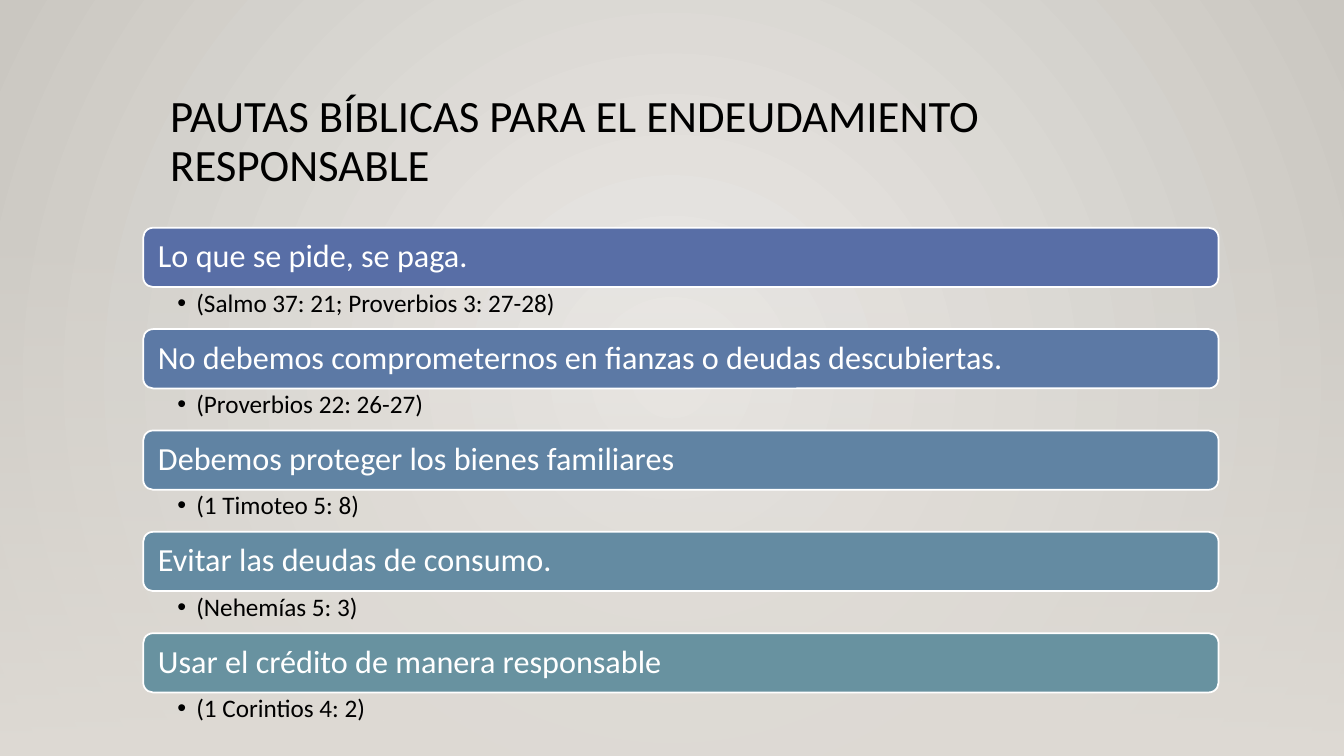
from lxml import etree
from pptx import Presentation
from pptx.dml.color import RGBColor
from pptx.enum.shapes import MSO_SHAPE
from pptx.enum.text import MSO_ANCHOR, MSO_AUTO_SIZE, PP_ALIGN
from pptx.oxml.ns import qn
from pptx.util import Cm, Pt

RECT, ROUND = MSO_SHAPE.RECTANGLE, MSO_SHAPE.ROUNDED_RECTANGLE
TOP, MIDDLE = MSO_ANCHOR.TOP, MSO_ANCHOR.MIDDLE
LEFT = PP_ALIGN.LEFT
FIXED = MSO_AUTO_SIZE.NONE

HEX = {"ink": "000000", "white": "FFFFFF", "glow": "ECEAE7",
       "edge": "CAC7C1", "floor": "DFDBD5"}

TITLE = "PAUTAS BÍBLICAS PARA EL ENDEUDAMIENTO RESPONSABLE"
RULES = [
    ("Lo que se pide, se paga.", "(Salmo 37: 21; Proverbios 3: 27-28)", "586EA6"),
    ("No debemos comprometernos en fianzas o deudas descubiertas.",
     "(Proverbios 22: 26-27)", "5C79A5"),
    ("Debemos proteger los bienes familiares", "(1 Timoteo 5: 8)", "6083A3"),
    ("Evitar las deudas de consumo.", "(Nehemías 5: 3)", "648BA2"),
    ("Usar el crédito de manera responsable", "(1 Corintios 4: 2)", "6892A0"),
]

TITLE_BOX = (4.04, 2.24, 26.67, 2.92)
LIST_BOX = (3.61, 5.74, 27.1, 12.77)
FLOOR_BOX = (0, 5.61, 33.87, 13.44)
BAR_SHARE = 0.585

HEAD = {"size": Pt(32), "color": "ink", "anchor": TOP, "pads": (0.25, 0.13, 0.25, 0.13)}
BAR = {"size": Pt(23), "color": "white", "anchor": MIDDLE, "pads": (0.3, 0.25, 0.3, 0.25)}
VERSE = {"size": Pt(18), "color": "ink", "anchor": TOP, "pads": (0.86, 0.08, 0.46, 0.08)}


def rgb(code):
    return RGBColor.from_string(code)


def lengths(box):
    return [Cm(n) for n in box]


def write(shape, text, style):
    frame = shape.text_frame
    sides = ("margin_left", "margin_top", "margin_right", "margin_bottom")
    look = dict(zip(sides, lengths(style["pads"])))
    look.update(word_wrap=True, auto_size=FIXED, vertical_anchor=style["anchor"])
    for key, value in look.items():
        setattr(frame, key, value)
    frame.text = text
    para = frame.paragraphs[0]
    para.alignment, para.line_spacing = LEFT, 0.9
    font = para.runs[0].font
    for key, value in {"name": "Calibri", "size": style["size"], "bold": False}.items():
        setattr(font, key, value)
    font.color.rgb = rgb(HEX[style["color"]])
    return para


def bullet(para):
    props = para._p.get_or_add_pPr()
    props.set("marL", str(Cm(0.48)))
    props.set("indent", str(-Cm(0.48)))
    etree.SubElement(props, qn("a:buFont")).set("typeface", "Arial")
    etree.SubElement(props, qn("a:buChar")).set("char", "•")


def blend(owner, fill, names):
    fill.gradient()
    for stop, name, place in zip(fill.gradient_stops, names, (0, 1)):
        stop.color.rgb = rgb(HEX[name])
        stop.position = place
    return owner.element.find(".//" + qn("a:gradFill"))


def backdrop(slide, box):
    grad = blend(slide, slide.background.fill, ("glow", "edge"))
    grad.remove(grad.find(qn("a:lin")))
    ring = etree.SubElement(grad, qn("a:path"), {"path": "circle"})
    etree.SubElement(ring, qn("a:fillToRect"), dict.fromkeys("ltrb", "50000"))

    floor = slide.shapes.add_shape(RECT, *lengths(box))
    floor.shadow.inherit = False
    floor.line.fill.background()
    grad = blend(floor, floor.fill, ("floor", "floor"))
    grad.find(qn("a:lin")).set("ang", "5400000")
    etree.SubElement(grad.find(".//" + qn("a:srgbClr")), qn("a:alpha")).set("val", "0")


def heading(slide, box):
    title = slide.shapes.title
    for key, value in zip(("left", "top", "width", "height"), lengths(box)):
        setattr(title, key, value)
    write(title, TITLE, HEAD)


def rule(slide, box, text, verse, tint):
    left, top, width, height = box
    tall = height * BAR_SHARE
    bar = slide.shapes.add_shape(ROUND, *lengths((left, top, width, tall)))
    bar.shadow.inherit = False
    bar.fill.solid()
    bar.fill.fore_color.rgb = rgb(tint)
    bar.line.color.rgb = rgb(HEX["white"])
    bar.line.width = Pt(1.25)
    write(bar, text, BAR)

    note = slide.shapes.add_textbox(*lengths((left, top + tall, width, height - tall)))
    bullet(write(note, verse, VERSE))


def rules(slide, box):
    left, top, width, height = box
    step = height / len(RULES)
    for row, item in enumerate(RULES):
        rule(slide, (left, top + row * step, width, step), *item)


def main():
    deck = Presentation()
    deck.slide_width, deck.slide_height = Cm(33.87), Cm(19.05)
    slide = deck.slides.add_slide(deck.slide_layouts.get_by_name("Title Only"))
    backdrop(slide, FLOOR_BOX)
    heading(slide, TITLE_BOX)
    rules(slide, LIST_BOX)
    deck.save("out.pptx")


if __name__ == "__main__":
    main()
